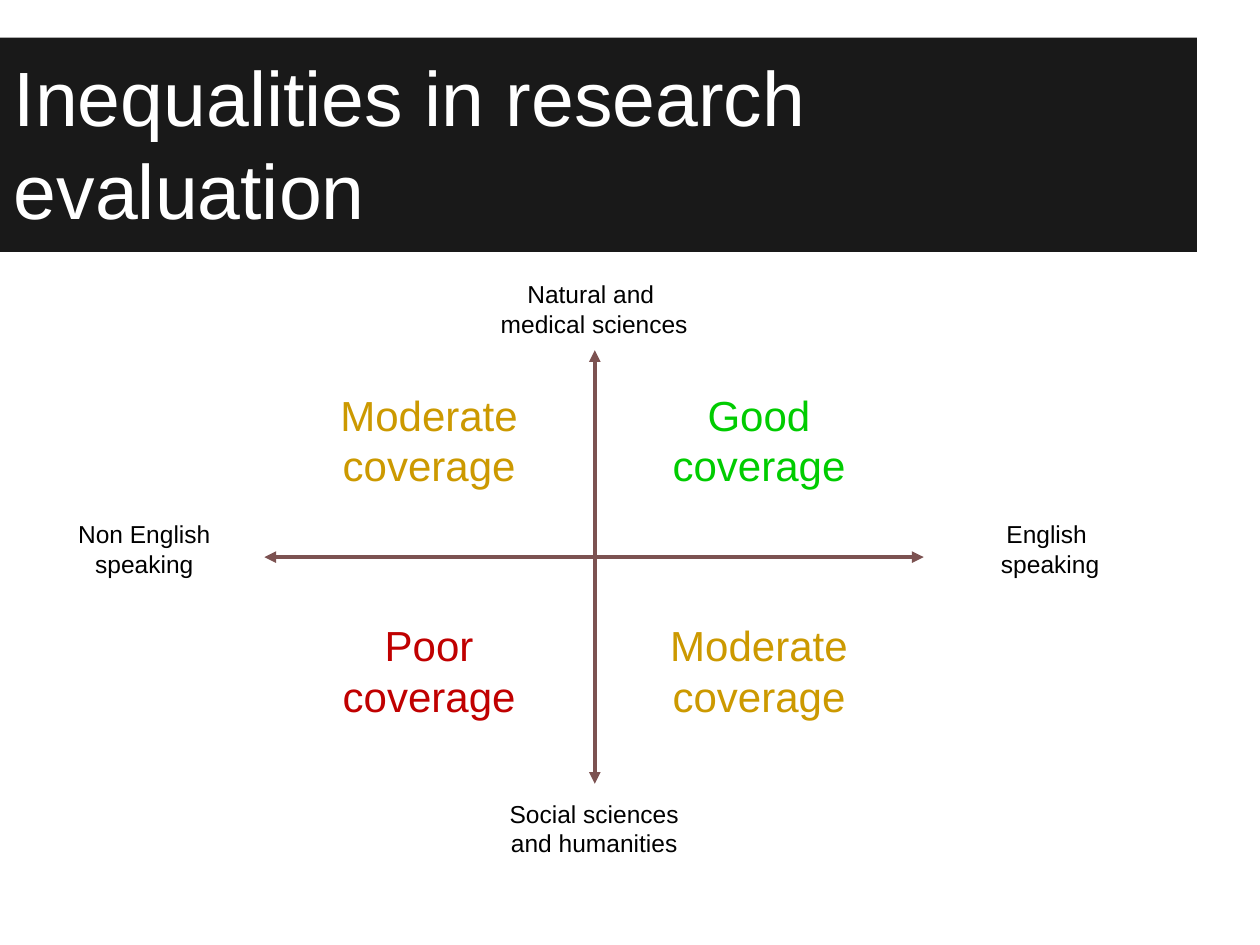
from lxml import etree
from pptx import Presentation
from pptx import util as u
from pptx.dml.color import RGBColor
from pptx.enum import shapes, text
from pptx.oxml.ns import qn


def colour(value):
    return RGBColor.from_string(value)


class Painter:
    font = "Arial"
    dark, white, black, brown = "191919", "FFFFFF", "000000", "7C5251"
    green, amber, red = "00CC00", "CC9900", "C00000"

    def __init__(self, page):
        self.page = page

    def bar(self, left, top, width, height):
        box = self.page.shapes.add_shape(
            shapes.MSO_SHAPE.RECTANGLE, u.Cm(left), u.Cm(top), u.Cm(width), u.Cm(height))
        box.shadow.inherit = False
        box.fill.solid()
        box.fill.fore_color.rgb = colour(self.dark)
        box.line.fill.background()

    def words(self, lines, left, top, width, height, size, ink,
              align=text.PP_ALIGN.CENTER, anchor=text.MSO_ANCHOR.TOP):
        box = self.page.shapes.add_textbox(u.Cm(left), u.Cm(top), u.Cm(width), u.Cm(height))
        frame = box.text_frame
        frame.word_wrap = True
        frame.vertical_anchor = anchor
        frame.text = "\n".join(lines)
        for para in frame.paragraphs:
            para.alignment = align
            para.font.name = self.font
            para.font.size = u.Pt(size)
            para.font.color.rgb = colour(ink)
        return frame

    def axis(self, x1, y1, x2, y2):
        arrow = self.page.shapes.add_connector(
            shapes.MSO_CONNECTOR.STRAIGHT, u.Cm(x1), u.Cm(y1), u.Cm(x2), u.Cm(y2))
        arrow.line.color.rgb = colour(self.brown)
        arrow.line.width = u.Pt(2.25)
        outline = arrow.line._get_or_add_ln()
        for end in ("a:headEnd", "a:tailEnd"):
            etree.SubElement(outline, qn(end), type="triangle")
        etree.SubElement(arrow._element.spPr, qn("a:effectLst"))


def main():
    deck = Presentation()
    deck.slide_width, deck.slide_height = u.Cm(25.4), u.Cm(19.05)
    painter = Painter(deck.slides.add_slide(deck.slide_layouts[6]))

    # Title band
    painter.bar(0, 0.76, 24.13, 4.32)
    title = painter.words(["Inequalities in research evaluation"], 0.03, 0.76, 22.86, 4.22,
                          44, painter.white, text.PP_ALIGN.LEFT, text.MSO_ANCHOR.BOTTOM)
    title.margin_left = title.margin_right = u.Cm(0.25)
    title.margin_top = title.margin_bottom = u.Cm(0.25)

    # Crossed axes
    painter.axis(5.33, 11.23, 18.62, 11.23)
    painter.axis(11.99, 15.8, 11.99, 7.06)

    # Axis labels
    width = 4.6
    for lines, left, top in (
        (["Natural and ", "medical sciences"], 9.68, 5.51),
        (["Social sciences and humanities"], 9.68, 15.98),
        (["English ", "speaking"], 18.87, 10.34),
        (["Non English speaking"], 0.61, 10.34),
    ):
        painter.words(lines, left, top, width, 1.45, 14, painter.black)

    # Quadrants
    west, east, north, south = 6.35, 13, 7.72, 12.37
    for grade, left, top, ink in (
        ("Good", east, north, painter.green),
        ("Moderate", east, south, painter.amber),
        ("Moderate", west, north, painter.amber),
        ("Poor", west, south, painter.red),
    ):
        painter.words([grade, "coverage"], left, top, width, 2.31, 24, ink)

    deck.save("out.pptx")


if __name__ == "__main__":
    main()
